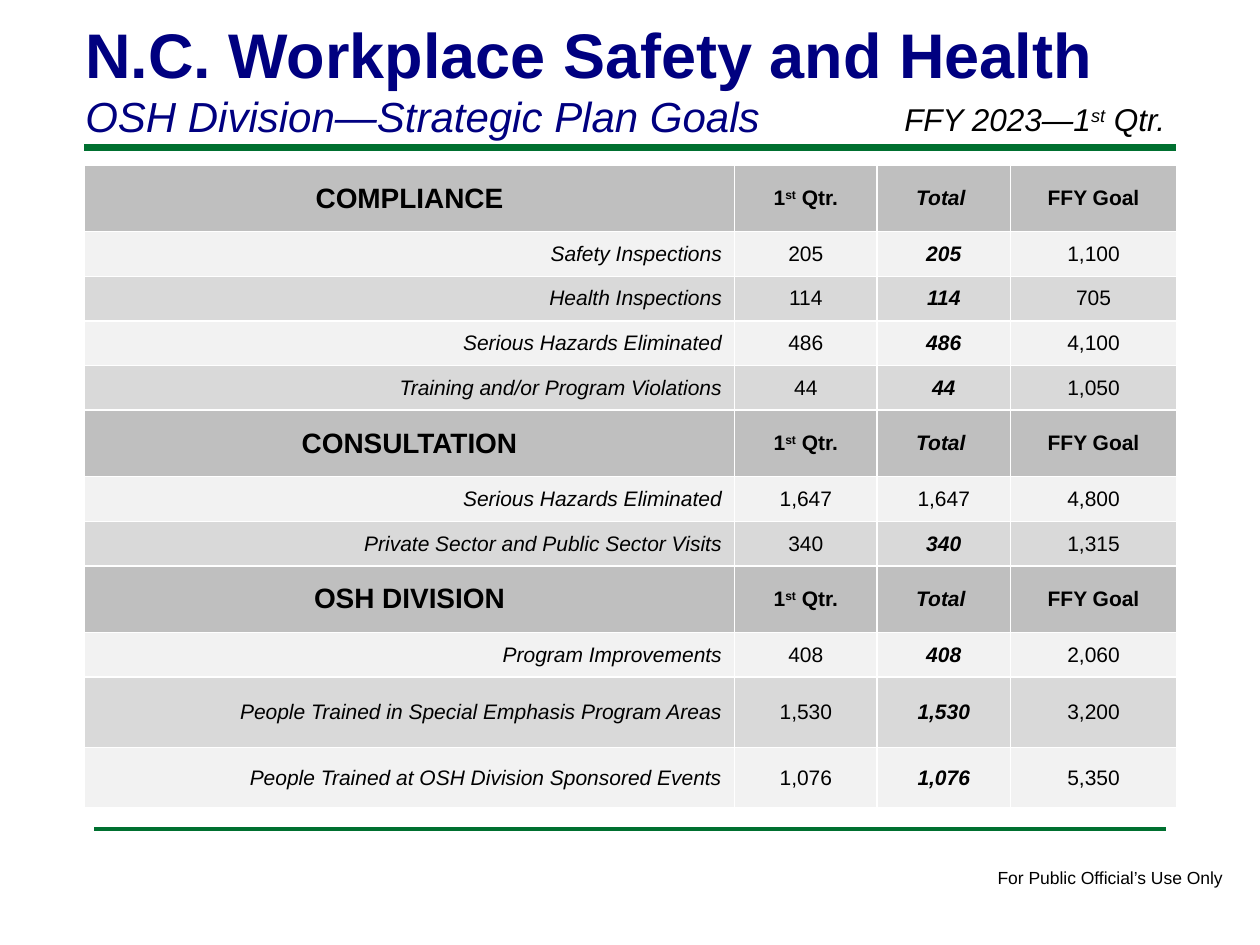
from lxml.etree import SubElement
from pptx import Presentation
from pptx.dml.color import RGBColor
from pptx.enum.shapes import MSO_CONNECTOR as Link
from pptx.enum.text import MSO_ANCHOR as Anchor, PP_ALIGN as Align
from pptx.oxml.ns import qn
from pptx.util import Cm, Pt

INK = {"green": "007030", "navy": "000080", "black": "000000", "white": "FFFFFF",
       "head": "BFBFBF", "light": "F2F2F2", "dark": "D9D9D9"}
COLS = [13.11, 2.87, 2.69, 3.35]
HEADS = ["1|st| Qtr.", "Total ", "FFY Goal"]
HEAD_TALL, ROW_TALL = 1.34, 0.9
TALL = {"People Trained in Special Emphasis Program Areas": 1.42,
        "People Trained at OSH Division Sponsored Events": 1.22}
PLAIN = {("CONSULTATION", "Serious Hazards Eliminated")}
GOALS = {
    "COMPLIANCE": [
        ("Safety Inspections", "205", "1,100"),
        ("Health Inspections", "114", "705"),
        ("Serious Hazards Eliminated", "486", "4,100"),
        ("Training and/or Program Violations", "44", "1,050"),
    ],
    "CONSULTATION": [
        ("Serious Hazards Eliminated", "1,647", "4,800"),
        ("Private Sector and Public Sector Visits", "340", "1,315"),
    ],
    "OSH DIVISION": [
        ("Program Improvements", "408", "2,060"),
        ("People Trained in Special Emphasis Program Areas", "1,530", "3,200"),
        ("People Trained at OSH Division Sponsored Events", "1,076", "5,350"),
    ],
}


def color(name):
    """Return the named colour."""
    return RGBColor.from_string(INK[name])


def write(para, text, size, ink="black", bold=False, slant=False, align=Align.LEFT):
    """Fill a paragraph; text between bars is raised."""
    para.alignment = align
    font = para.font
    font.name, font.size, font.bold, font.italic = "Arial", Pt(size), bold, slant
    font.color.rgb = color(ink)
    for i, part in enumerate(text.split("|")):
        run = para.add_run()
        run.text = part
        if i % 2:
            run._r.get_or_add_rPr().set("baseline", "30000")


def add_text(slide, box, lines, wrap=True, anchor=Anchor.TOP):
    """Add a text box with one paragraph per line."""
    frame = slide.shapes.add_textbox(*map(Cm, box)).text_frame
    frame.word_wrap, frame.vertical_anchor = wrap, anchor
    for i, line in enumerate(lines):
        write(frame.add_paragraph() if i else frame.paragraphs[0], **line)


def add_rule(slide, left, right, top, width):
    """Add a level green line."""
    rule = slide.shapes.add_connector(
        Link.STRAIGHT, Cm(left), Cm(top), Cm(right), Cm(top))
    rule.line.color.rgb = color("green")
    rule.line.width = Pt(width)
    SubElement(rule._element.spPr, qn("a:effectLst"))


def set_cell(cell, text, fill, size=12, **style):
    """Write a cell with white borders and a plain fill."""
    props = cell._tc.get_or_add_tcPr()
    for side in "LRTB":
        edge = SubElement(props, qn(f"a:ln{side}"), w=str(Pt(1)))
        paint = SubElement(edge, qn("a:solidFill"))
        SubElement(paint, qn("a:srgbClr"), val=INK["white"])
    cell.fill.solid()
    cell.fill.fore_color.rgb = color(fill)
    cell.vertical_anchor = Anchor.MIDDLE
    write(cell.text_frame.paragraphs[0], text, size, **style)


def fill_head(row, title):
    """Fill the heading row of a section."""
    row.height = Cm(HEAD_TALL)
    for i, (cell, text) in enumerate(zip(row.cells, [title, *HEADS])):
        set_cell(cell, text, "head", 12 if i else 16, bold=True,
                 slant=i == 2, align=Align.CENTER)


def fill_goal(row, goal, fill, strong):
    """Fill one goal row, where the total equals the quarter."""
    label, count, target = goal
    row.height = Cm(TALL.get(label, ROW_TALL))
    name, first, total, aim = row.cells
    set_cell(name, label, fill, slant=True, align=Align.RIGHT)
    set_cell(first, count, fill, align=Align.CENTER)
    set_cell(total, count, fill, bold=strong, slant=strong, align=Align.CENTER)
    set_cell(aim, target, fill, align=Align.CENTER)


def add_goals(slide):
    """Add the table of goals by section."""
    count = sum(1 + len(goals) for goals in GOALS.values())
    table = slide.shapes.add_table(
        count, len(COLS), Cm(1.7), Cm(3.33), Cm(sum(COLS)), Cm(12.98)).table
    table.first_row = table.horz_banding = False
    for col, width in zip(table.columns, COLS):
        col.width = Cm(width)
    rows = iter(table.rows)
    for title, goals in GOALS.items():
        fill_head(next(rows), title)
        for i, goal in enumerate(goals):
            fill_goal(next(rows), goal, "dark" if i % 2 else "light",
                      (title, goal[0]) not in PLAIN)


def main():
    """Build and save the slide."""
    deck = Presentation()
    deck.slide_width, deck.slide_height = Cm(25.4), Cm(19.05)
    slide = deck.slides.add_slide(deck.slide_layouts[6])
    add_rule(slide, 1.7, 23.7, 2.97, 4)
    add_rule(slide, 1.9, 23.5, 16.71, 2)
    add_text(slide, (19.86, 17.35, 5.1, 0.69),
             [dict(text="For Public Official’s Use Only", size=10)], wrap=False)
    add_text(slide, (1.47, 0.15, 20.96, 2.82), [
        dict(text="N.C. Workplace Safety and Health", size=36, ink="navy", bold=True),
        dict(text="OSH Division—Strategic Plan Goals", size=24, ink="navy", slant=True),
    ], anchor=Anchor.BOTTOM)
    add_goals(slide)
    add_text(slide, (17.98, 1.9, 6.35, 1.02),
             [dict(text="FFY 2023—1|st| Qtr.", size=18, slant=True)])
    deck.save("out.pptx")


if __name__ == "__main__":
    main()
